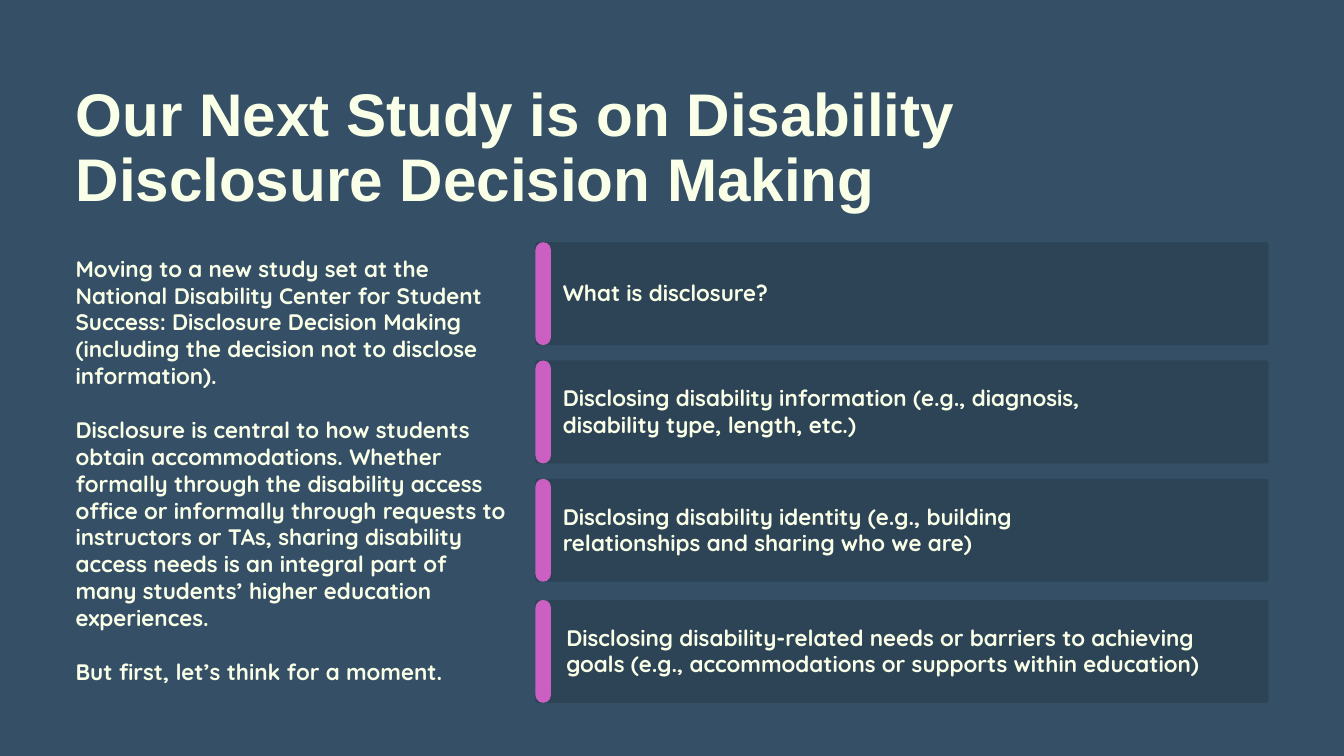
from dataclasses import dataclass

import pptx
import pptx.dml.color
import pptx.enum.shapes
import pptx.enum.text
import pptx.oxml
import pptx.oxml.ns
import pptx.util

EMU_PER_PX = 9525
SLIDE_WIDTH, SLIDE_HEIGHT = 1920, 1080

BACKGROUND = pptx.dml.color.RGBColor(0x35, 0x4F, 0x66)
CREAM = pptx.dml.color.RGBColor(0xFA, 0xFF, 0xE7)
ORCHID = pptx.dml.color.RGBColor(0xCC, 0x60, 0xC2)
BLACK = pptx.dml.color.RGBColor(0, 0, 0)

TITLE_FONT = {"name": "Arial", "size": pptx.util.Pt(64.5), "bold": True}
BODY_FONT = {"name": "Quicksand", "size": pptx.util.Pt(24), "bold": True}
TITLE_LINE = pptx.util.Pt(69.7)
BODY_LINE = pptx.util.Pt(28.8)
BODY_LINE_PX = 38

PANEL_LEFT, PANEL_WIDTH, PANEL_HEIGHT = 765, 1047, 147
PANEL_RADIUS = 3
PANEL_OPACITY = 15
ACCENT_WIDTH = 22

TITLE = "Our Next Study is on Disability Disclosure Decision Making"
INTRODUCTION = [
    "Moving to a new study set at the National Disability Center for Student "
    "Success: Disclosure Decision Making (including the decision not to "
    "disclose information).",
    "Disclosure is central to how students obtain accommodations. Whether "
    "formally through the disability access office or informally through "
    "requests to instructors or TAs, sharing disability access needs is an "
    "integral part of many students’ higher education experiences.",
    "But first, let’s think for a moment.",
]


@dataclass(frozen=True)
class Box:
    left: int
    top: int
    width: int
    height: int

    def emu(self) -> list[int]:
        return [px * EMU_PER_PX for px in (self.left, self.top, self.width, self.height)]


@dataclass(frozen=True)
class Topic:
    text: str
    top: int
    text_left: int
    text_width: int
    lines: int = 2


TOPICS = [
    Topic("What is disclosure?", 346, 804, 581, lines=1),
    Topic("Disclosing disability information (e.g., diagnosis, disability type, "
          "length, etc.)", 515, 804, 818),
    Topic("Disclosing disability identity (e.g., building relationships and "
          "sharing who we are)", 684, 804, 790),
    Topic("Disclosing disability-related needs or barriers to achieving goals "
          "(e.g., accommodations or supports within education)", 857, 809, 950),
]


def write(frame, paragraphs: list[str], font: dict, line_spacing: int) -> None:
    """Fill a text frame, leaving one line of space between paragraphs."""
    frame_format = {
        "margin_left": 0, "margin_top": 0, "margin_right": 0, "margin_bottom": 0,
        "word_wrap": True,
        "auto_size": pptx.enum.text.MSO_AUTO_SIZE.NONE,
        "vertical_anchor": pptx.enum.text.MSO_ANCHOR.TOP,
    }
    for name, value in frame_format.items():
        setattr(frame, name, value)
    for index, text in enumerate(paragraphs):
        paragraph = frame.add_paragraph() if index else frame.paragraphs[0]
        paragraph.alignment = pptx.enum.text.PP_ALIGN.LEFT
        paragraph.line_spacing = line_spacing
        paragraph.space_before = line_spacing if index else pptx.util.Pt(0)
        run = paragraph.add_run()
        run.text = text
        for name, value in font.items():
            setattr(run.font, name, value)
        run.font.color.rgb = CREAM


def add_text(slide, box: Box, paragraphs: list[str]) -> None:
    write(slide.shapes.add_textbox(*box.emu()).text_frame, paragraphs, BODY_FONT, BODY_LINE)


def add_rounded_bar(slide, box: Box, radius: float,
                    color: pptx.dml.color.RGBColor, opacity: int = 100) -> None:
    bar = slide.shapes.add_shape(
        pptx.enum.shapes.MSO_SHAPE.ROUNDED_RECTANGLE, *box.emu())
    bar.adjustments[0] = radius / min(box.width, box.height)
    bar.shadow.inherit = False
    bar.line.fill.background()
    bar.fill.solid()
    bar.fill.fore_color.rgb = color
    if opacity < 100:
        srgb = bar.fill._xPr.find(".//" + pptx.oxml.ns.qn("a:srgbClr"))
        alpha = pptx.oxml.parse_xml(
            f'<a:alpha {pptx.oxml.ns.nsdecls("a")} val="{opacity * 1000}"/>')
        srgb.append(alpha)


def add_topic(slide, topic: Topic) -> None:
    panel = Box(PANEL_LEFT, topic.top, PANEL_WIDTH, PANEL_HEIGHT)
    accent = Box(PANEL_LEFT, topic.top, ACCENT_WIDTH, PANEL_HEIGHT)
    text_height = topic.lines * BODY_LINE_PX + 1
    text_top = topic.top + (PANEL_HEIGHT - text_height) // 2 - 1
    add_rounded_bar(slide, panel, PANEL_RADIUS, BLACK, PANEL_OPACITY)
    add_rounded_bar(slide, accent, ACCENT_WIDTH / 2, ORCHID)
    add_text(slide, Box(topic.text_left, text_top, topic.text_width, text_height),
             [topic.text])


def add_title(slide, box: Box, text: str) -> None:
    title = slide.shapes.title
    for name, value in zip(("left", "top", "width", "height"), box.emu()):
        setattr(title, name, value)
    write(title.text_frame, [text], TITLE_FONT, TITLE_LINE)


def main() -> None:
    presentation = pptx.Presentation()
    presentation.slide_width = SLIDE_WIDTH * EMU_PER_PX
    presentation.slide_height = SLIDE_HEIGHT * EMU_PER_PX
    slide = presentation.slides.add_slide(
        presentation.slide_layouts.get_by_name("Title Only"))
    slide.background.fill.solid()
    slide.background.fill.fore_color.rgb = BACKGROUND

    add_title(slide, Box(108, 119, 1596, 186), TITLE)
    add_text(slide, Box(108, 364, 620, 507), INTRODUCTION)
    for topic in TOPICS:
        add_topic(slide, topic)
    presentation.save("out.pptx")


if __name__ == "__main__":
    main()
